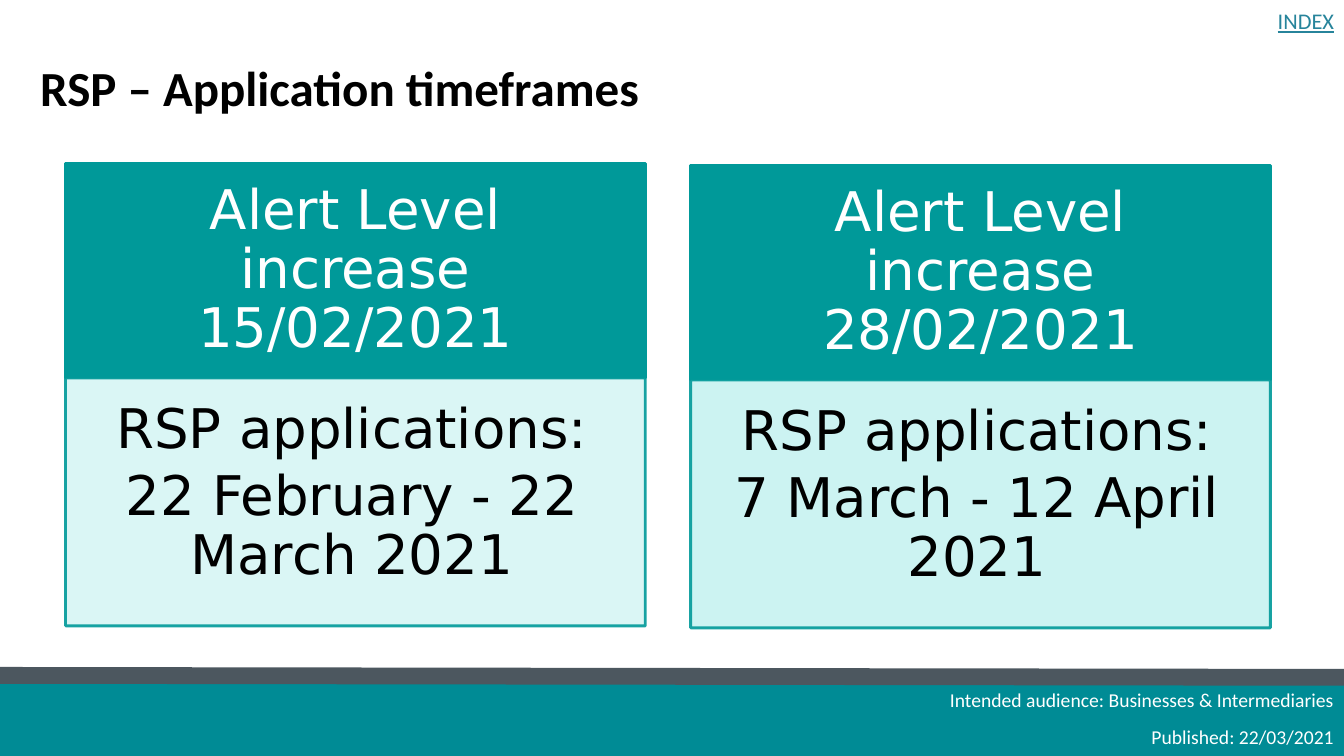
from lxml.etree import SubElement
from pptx import Presentation
from pptx.dml.color import RGBColor
from pptx.enum.shapes import MSO_CONNECTOR, MSO_SHAPE
from pptx.enum.text import MSO_ANCHOR, PP_ALIGN
from pptx.oxml.ns import qn
from pptx.util import Inches, Pt

TEAL = "009999"
PALE = "C7F2F1"
WHITE = "FFFFFF"
BLACK = "000000"


def color(hex_value):
    """Turn a hex string into a colour."""
    return RGBColor.from_string(hex_value)


def set_alpha(fill, percent):
    """Make a solid fill partly transparent."""
    tint = fill._xPr.find(qn("a:solidFill"))[0]
    SubElement(tint, qn("a:alpha"), val=str(percent * 1000))


def write(shape, text, size, font, hex_value, align, insets=(0.1, 0.05, 0.1, 0.05),
          anchor=MSO_ANCHOR.TOP, spacing=None, after=None, bold=None, underline=None):
    """Fill a shape with evenly formatted paragraphs."""
    frame = shape.text_frame
    frame.text = text
    frame.word_wrap = True
    frame.vertical_anchor = anchor
    frame.margin_left, frame.margin_top, frame.margin_right, frame.margin_bottom = map(Inches, insets)
    for paragraph in frame.paragraphs:
        paragraph.alignment = align
        paragraph.line_spacing = spacing
        paragraph.space_after = after
        for run in paragraph.runs:
            run.font.size = Pt(size)
            run.font.name = font
            run.font.bold = bold
            run.font.underline = underline
            run.font.color.rgb = color(hex_value)


def add_label(slide, box, text, size, hex_value, align, **style):
    """Place one line of Calibri text in a box."""
    label = slide.shapes.add_textbox(*map(Inches, box))
    write(label, text, size, "Calibri", hex_value, align, **style)


def add_panel(slide, box, fill, opacity=100, line_opacity=100):
    """Draw a plain rectangle with a teal outline."""
    panel = slide.shapes.add_shape(MSO_SHAPE.RECTANGLE, *map(Inches, box))
    panel.shadow.inherit = False
    panel.fill.solid()
    panel.fill.fore_color.rgb = color(fill)
    panel.line.color.rgb = color(TEAL)
    panel.line.width = Pt(2)
    if opacity < 100:
        set_alpha(panel.fill, opacity)
    if line_opacity < 100:
        set_alpha(panel.line.fill, line_opacity)
    return panel


def add_timeframe(slide, left, top, alert, applications, opacity):
    """Stack an alert heading on its application period."""
    width, heading_height, period_height = 5.75, 2.13, 2.46
    heading = add_panel(slide, (left, top, width, heading_height), TEAL)
    write(heading, alert, 39, "DejaVu Sans", WHITE, PP_ALIGN.CENTER,
          (0.3, 0.17, 0.3, 0.17), MSO_ANCHOR.MIDDLE, 0.9)
    period = add_panel(slide, (left, top + heading_height, width, period_height), PALE, opacity, 90)
    write(period, applications, 39, "DejaVu Sans", BLACK, PP_ALIGN.CENTER,
          (0.23, 0.23, 0.3, 0.34), spacing=0.9, after=Pt(6))


def add_footer(slide, left, top, width, height):
    """Draw the footer band, its upper rule and its two lines of text."""
    band = slide.shapes.add_shape(MSO_SHAPE.RECTANGLE, *map(Inches, (left, top, width, height)))
    band.shadow.inherit = False
    band.fill.solid()
    band.fill.fore_color.rgb = color("008B95")
    band.line.fill.background()
    rule = slide.shapes.add_connector(MSO_CONNECTOR.STRAIGHT, Inches(left), Inches(top - 0.06),
                                      Inches(left + width), Inches(top - 0.04))
    rule.line.color.rgb = color("4C575F")
    rule.line.width = Pt(12)
    SubElement(rule._element.spPr, qn("a:effectLst"))
    lines = ("Intended audience: Businesses & Intermediaries", "Published: 22/03/2021")
    for row, text in enumerate(lines):
        add_label(slide, (left + 2.43, top + 0.02 + row * 0.36, width - 2.43, 0.36),
                  text, 14, WHITE, PP_ALIGN.RIGHT)


def main():
    """Build the timeframes slide."""
    deck = Presentation()
    deck.slide_width, deck.slide_height = Inches(13.33), Inches(7.5)
    slide = deck.slides.add_slide(deck.slide_layouts[6])
    add_footer(slide, 0, 6.76, 13.33, 0.75)
    add_label(slide, (12.33, 0.02, 1, 0.37), "INDEX", 16, "27849B", PP_ALIGN.RIGHT, underline=True)
    add_label(slide, (0.3, 0.4, 12.31, 0.92), "RSP – Application timeframes", 35, BLACK,
              PP_ALIGN.LEFT, anchor=MSO_ANCHOR.MIDDLE, bold=True)
    add_timeframe(slide, 0.65, 1.62, "Alert Level increase 15/02/2021",
                  "RSP applications:\n22 February - 22 March 2021", 65)
    add_timeframe(slide, 6.85, 1.64, "Alert Level increase 28/02/2021",
                  "RSP applications:\n7 March - 12 April 2021", 90)
    deck.save("out.pptx")


if __name__ == "__main__":
    main()
